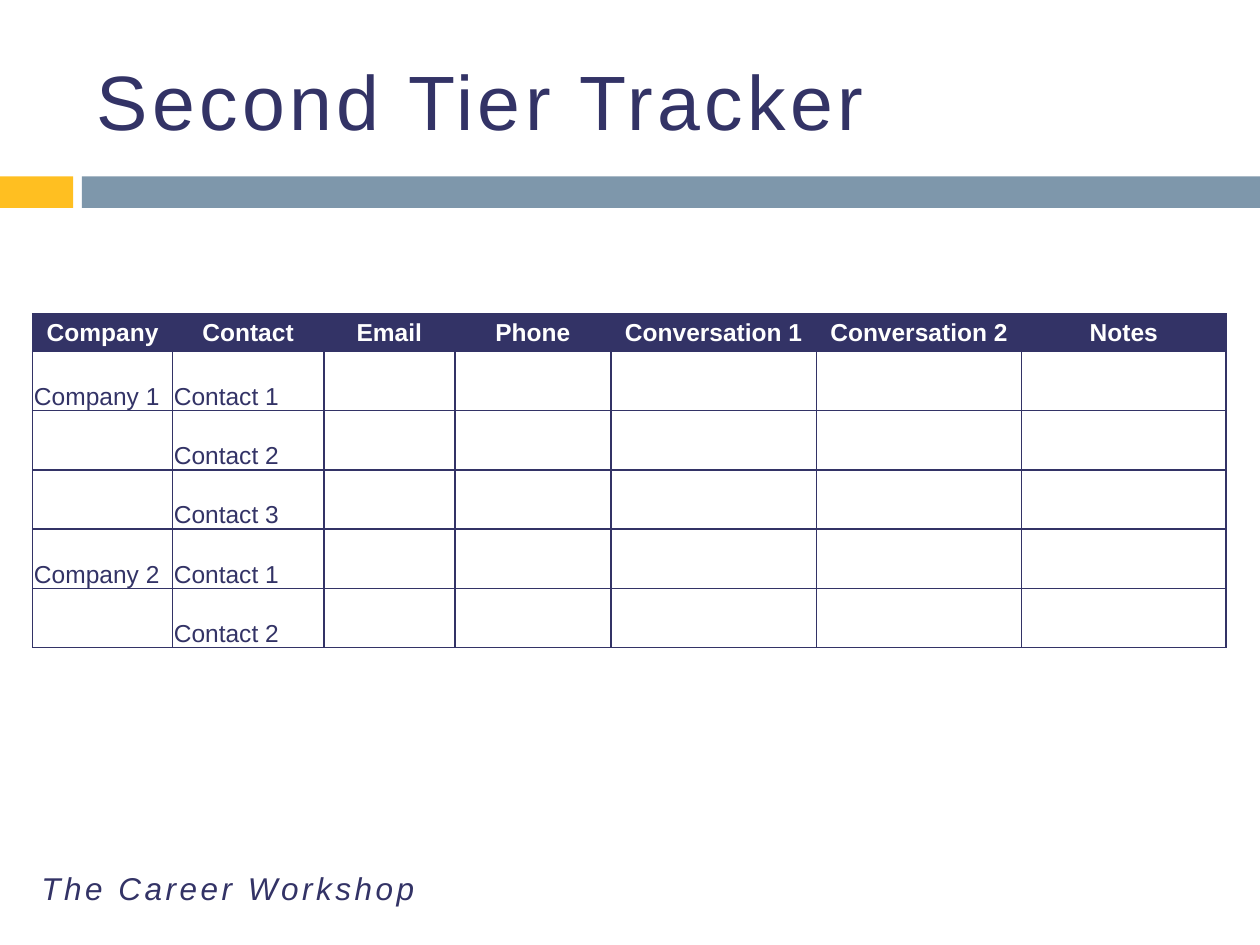
from lxml.etree import SubElement
from pptx import Presentation
from pptx.dml.color import RGBColor
from pptx.enum.shapes import MSO_SHAPE
from pptx.enum.text import MSO_ANCHOR, MSO_AUTO_SIZE, PP_ALIGN
from pptx.oxml.ns import qn
from pptx.util import Inches, Pt

NAVY, WHITE, GOLD, STEEL = "333366", "FFFFFF", "FFBF21", "7E97AB"


def paint(color_format, hex_color):
    color_format.rgb = RGBColor.from_string(hex_color)


def style(para, size, hex_color, bold=False, italic=False, spacing=0):
    """Format every run of a paragraph; spacing is the letter gap in points."""
    for span in para.runs:
        font = span.font
        font.name, font.size = "Arial", Pt(size)
        font.bold, font.italic = bold, italic
        paint(font.color, hex_color)
        if spacing:
            span._r.get_or_add_rPr().set("spc", str(int(spacing * 100)))


deck = Presentation()
deck.slide_width, deck.slide_height = Inches(10), Inches(7.5)
page = deck.slides.add_slide(deck.slide_layouts[6])

# Two-colour band under the title
for left, width, color in [(0, 0.58, GOLD), (0.65, 9.35, STEEL)]:
    band = page.shapes.add_shape(
        MSO_SHAPE.RECTANGLE, Inches(left), Inches(1.4), Inches(width), Inches(0.25))
    band.shadow.inherit = False
    band.fill.solid()
    paint(band.fill.fore_color, color)
    band.line.fill.background()

# Title and footer
texts = [
    ("Second Tier Tracker", (0.67, 0.25, 8.92, 1.08), 44, False, 2.5, MSO_ANCHOR.MIDDLE),
    ("The Career Workshop", (0.23, 6.85, 3.52, 0.4), 18, True, 2, MSO_ANCHOR.TOP),
]
for words, place, size, italic, spacing, anchor in texts:
    box = page.shapes.add_textbox(*map(Inches, place))
    frame = box.text_frame
    frame.text = words
    frame.word_wrap = True
    frame.auto_size = MSO_AUTO_SIZE.NONE
    frame.vertical_anchor = anchor
    style(frame.paragraphs[0], size, NAVY, italic=italic, spacing=spacing)

# Tracker table
headings = ["Company", "Contact", "Email", "Phone",
            "Conversation 1", "Conversation 2", "Notes"]
contacts = [("Company 1", "Contact 1"), ("", "Contact 2"), ("", "Contact 3"),
            ("Company 2", "Contact 1"), ("", "Contact 2")]
column_widths = [1.11, 1.2, 1.04, 1.24, 1.63, 1.63, 1.62]
header_height, row_height = 0.3, 0.47

rows = [headings] + [[*pair] + [""] * (len(headings) - 2) for pair in contacts]
tracker = page.shapes.add_table(
    len(rows), len(headings), Inches(0.26), Inches(2.49), Inches(sum(column_widths)),
    Inches(header_height + row_height * len(contacts))).table

for column, width in zip(tracker.columns, column_widths):
    column.width = Inches(width)

for row_number, words_in_row in enumerate(rows):
    is_header = row_number == 0
    tracker.rows[row_number].height = Inches(header_height if is_header else row_height)
    for cell, words in zip(tracker.rows[row_number].cells, words_in_row):
        properties = cell._tc.get_or_add_tcPr()
        for side in ("a:lnL", "a:lnR", "a:lnT", "a:lnB"):
            border = SubElement(properties, qn(side), w=str(Pt(1)))
            SubElement(SubElement(border, qn("a:solidFill")), qn("a:srgbClr"), val=NAVY)
        if is_header:
            cell.fill.solid()
            paint(cell.fill.fore_color, NAVY)
        else:
            cell.fill.background()
        cell.margin_left = cell.margin_right = cell.margin_top = Inches(0.01)
        cell.margin_bottom = 0
        cell.vertical_anchor = MSO_ANCHOR.MIDDLE if is_header else MSO_ANCHOR.BOTTOM
        if words:
            para = cell.text_frame.paragraphs[0]
            para.text = words
            para.alignment = PP_ALIGN.CENTER if is_header else PP_ALIGN.LEFT
            style(para, 14, WHITE if is_header else NAVY, bold=is_header)

deck.save("out.pptx")
